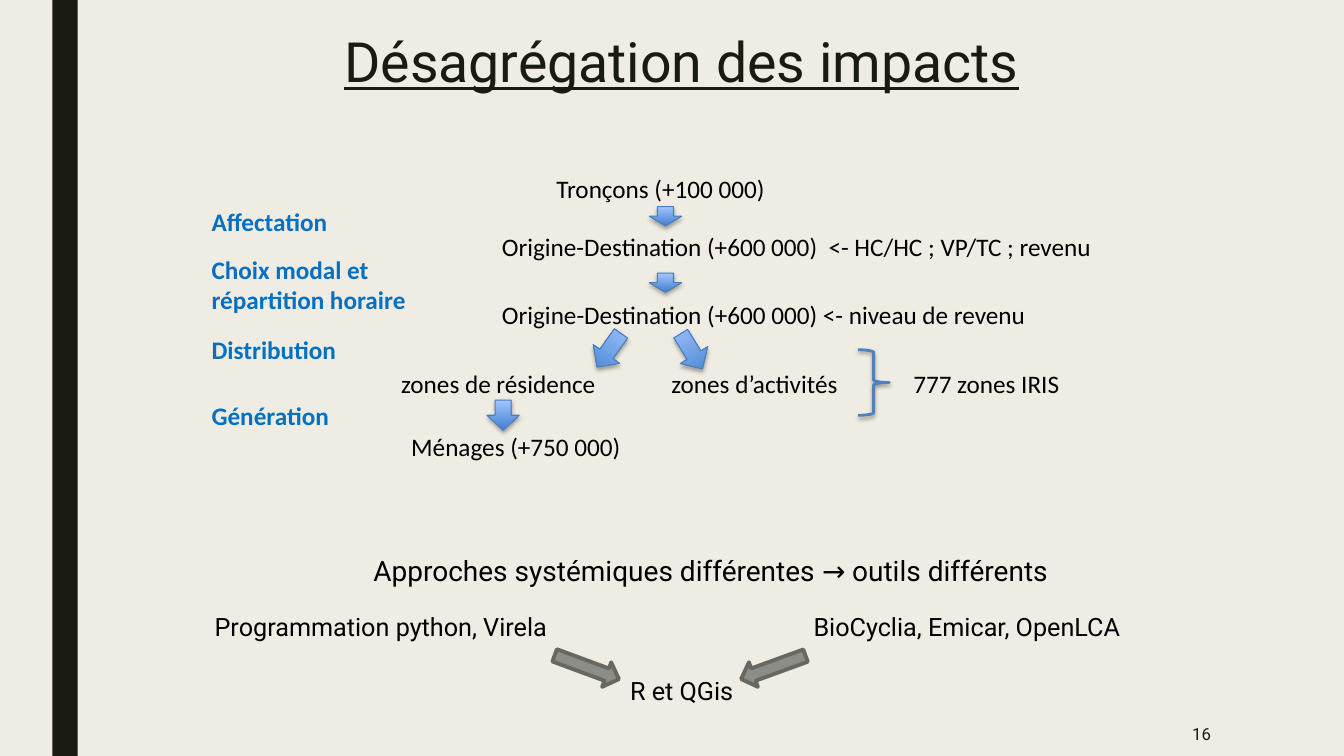
from lxml import etree
from pptx import Presentation
from pptx.dml.color import RGBColor
from pptx.enum import shapes, text
from pptx.oxml import ns
from pptx.util import Inches, Pt

COLORS = {
    "paper": "EFEDE3", "ink": "191B0E", "black": "000000", "step": "0070C0",
    "blue_dark": "3F80CE", "blue_light": "A4C4FF", "blue_line": "4B7EBC",
    "brace": "4F81BD", "grey": "8C8D86", "grey_line": "686863",
}
RGB = {name: RGBColor.from_string(value) for name, value in COLORS.items()}
MSO = shapes.MSO_SHAPE
ALIGN = text.PP_ALIGN

prs = Presentation()
prs.slide_width, prs.slide_height = Inches(13.33), Inches(7.5)
s = prs.slides.add_slide(prs.slide_layouts[6])
s.background.fill.solid()
s.background.fill.fore_color.rgb = RGB["paper"]


def add_text(content, x, y, w, h, font="Calibri", size=18, color="black", align=ALIGN.LEFT):
    tf = s.shapes.add_textbox(Inches(x), Inches(y), Inches(w), Inches(h)).text_frame
    tf.word_wrap = True
    p = tf.paragraphs[0]
    p.alignment = align
    r = p.add_run()
    r.text = content
    r.font.name, r.font.size = font, Pt(size)
    r.font.color.rgb = RGB[color]
    return tf, p, r


def add_shape(kind, x, y, w, h, line, width, rotation=0, shadow=None):
    sp = s.shapes.add_shape(kind, Inches(x), Inches(y), Inches(w), Inches(h))
    sp.rotation = rotation
    sp.line.color.rgb = RGB[line]
    sp.line.width = Pt(width)
    sp.shadow.inherit = False
    if shadow:
        distance, opacity = shadow
        effects = sp._element.spPr.find(ns.qn("a:effectLst"))
        outer = etree.SubElement(effects, ns.qn("a:outerShdw"), blurRad=str(Pt(3.1)),
                                 dist=str(Pt(distance)), dir="5400000", rotWithShape="0")
        tone = etree.SubElement(outer, ns.qn("a:srgbClr"), val=COLORS["black"])
        etree.SubElement(tone, ns.qn("a:alpha"), val=str(opacity * 1000))
    return sp


# Side band
band = add_shape(MSO.RECTANGLE, 0.52, 0, 0.25, 7.5, "ink", 0)
band.fill.solid()
band.fill.fore_color.rgb = RGB["ink"]
band.line.fill.background()

# Title and slide number
tf, p, r = add_text("Désagrégation des impacts", 1.51, 0.3, 10.5, 0.7,
                    "Roboto", 39.6, "ink", ALIGN.CENTER)
p.line_spacing = 0.89
r.font.underline = True
tf, p, r = add_text("16", 10.36, 7.06, 1.75, 0.44, "Roboto", 12, "ink", ALIGN.RIGHT)
tf.vertical_anchor = text.MSO_ANCHOR.MIDDLE

# Levels of the breakdown
for level, x, y, w in [
    ("Tronçons (+100 000)", 5.42, 1.67, 2.42),
    ("Origine-Destination (+600 000)  <- HC/HC ; VP/TC ; revenu", 4.88, 2.25, 6.43),
    ("Origine-Destination (+600 000) <- niveau de revenu", 4.88, 2.92, 6.05),
    ("zones de résidence", 3.88, 3.61, 2.23),
    ("zones d’activités", 6.56, 3.61, 2.12),
    ("777 zones IRIS", 8.96, 3.61, 2.36),
    ("Ménages (+750 000)", 3.98, 4.23, 2.41),
]:
    add_text(level, x, y, w, 0.4)

# Modelling steps
for step, y, w, h in [
    ("Affectation", 2, 1.57, 0.4),
    ("Choix modal et répartition horaire", 2.47, 2.18, 0.71),
    ("Distribution", 3.27, 1.57, 0.4),
    ("Génération", 3.92, 1.57, 0.4),
]:
    tf, p, r = add_text(step, 2, y, w, h, color="step")
    r.font.bold = True

# Blue arrows between levels
for x, y, h, rotation in [
    (6.44, 2.05, 0.19, 0), (6.44, 2.71, 0.19, 0), (5.88, 3.27, 0.41, 35.4),
    (6.7, 3.28, 0.41, 328.3), (4.83, 3.97, 0.3, 0),
]:
    arrow = add_shape(MSO.DOWN_ARROW, x, y, 0.32, h, "blue_line", 0.75, rotation, (1.8, 35))
    arrow.fill.gradient()
    arrow.fill.gradient_angle = 90
    for stop, color in zip(arrow.fill.gradient_stops, ("blue_dark", "blue_light")):
        stop.color.rgb = RGB[color]

# Brace around the zones
brace = add_shape(MSO.RIGHT_BRACE, 8.51, 3.47, 0.31, 0.65, "brace", 2, shadow=(1.6, 38))
brace.fill.background()

# Tools
add_text("Approches systémiques différentes → outils différents", 1.24, 5.44, 11.62, 0.44,
         "Roboto", 20, align=ALIGN.CENTER)
for tool, x, y, w in [
    ("Programmation python, Virela", 2.03, 6.02, 3.68),
    ("BioCyclia, Emicar, OpenLCA", 7.97, 6.02, 3.68),
    ("R et QGis", 6.15, 6.65, 1.38),
]:
    add_text(tool, x, y, w, 0.4, "Roboto")
for x, rotation in [(5.48, 20.3), (7.33, 160)]:
    arrow = add_shape(MSO.RIGHT_ARROW, x, 6.49, 0.68, 0.26, "grey_line", 2.75, rotation)
    arrow.fill.solid()
    arrow.fill.fore_color.rgb = RGB["grey"]

prs.save("out.pptx")
